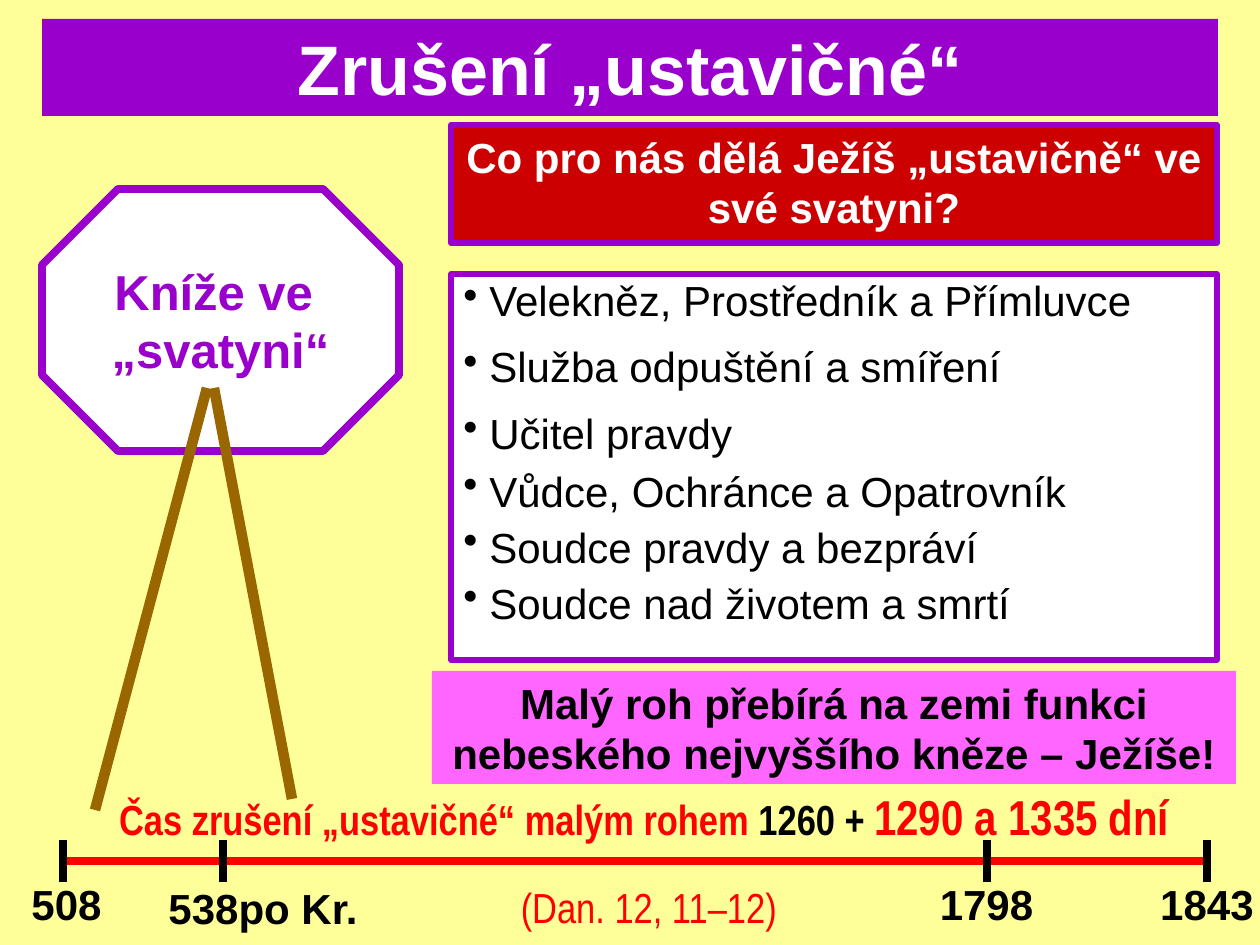
from pptx import Presentation
from pptx.util import Emu, Pt
from pptx.dml.color import RGBColor
from pptx.enum.shapes import MSO_SHAPE as Shape, MSO_CONNECTOR as Connector
from pptx.enum.text import PP_ALIGN as Align, MSO_ANCHOR as Anchor
from lxml.etree import SubElement
from pptx.oxml.ns import qn

PX = 914400 / 126  # EMU per px

PURPLE = RGBColor(0x99, 0x00, 0xCC)
WHITE = RGBColor(0xFF, 0xFF, 0xFF)
BLACK = RGBColor(0x00, 0x00, 0x00)
RED = RGBColor(0xFF, 0x00, 0x00)
DARK_RED = RGBColor(0xCC, 0x00, 0x00)
PINK = RGBColor(0xFF, 0x66, 0xFF)
BROWN = RGBColor(0x99, 0x66, 0x00)
CREAM = RGBColor(0xFF, 0xFF, 0x99)

prs = Presentation()
prs.slide_width, prs.slide_height = Emu(round(1260 * PX)), Emu(round(945 * PX))
slide = prs.slides.add_slide(prs.slide_layouts[6])
slide.background.fill.solid()
slide.background.fill.fore_color.rgb = CREAM


def add_block(box, paragraphs, fill=None, border=0, kind=Shape.RECTANGLE,
              align=Align.CENTER, anchor=Anchor.TOP):
    """Each paragraph is (paragraph format, [(text, size, colour, bold, font)])."""
    place = [Emu(round(v * PX)) for v in box]
    if fill is None:
        block = slide.shapes.add_textbox(*place)
    else:
        block = slide.shapes.add_shape(kind, *place)
        block.shadow.inherit = False
        block.fill.solid()
        block.fill.fore_color.rgb = fill
        if border:
            block.line.color.rgb = PURPLE
            block.line.width = Pt(border)
        else:
            block.line.fill.background()
    frame = block.text_frame
    frame.word_wrap = True
    frame.vertical_anchor = anchor
    for i, (spacing, runs) in enumerate(paragraphs):
        para = frame.paragraphs[0] if i == 0 else frame.add_paragraph()
        for key, value in {"alignment": align, **spacing}.items():
            setattr(para, key, value)
        for text, size, colour, bold, font in runs:
            run = para.add_run()
            run.text = text
            look = {"size": Pt(size), "bold": bold, "name": font}
            for key, value in look.items():
                setattr(run.font, key, value)
            run.font.color.rgb = colour
    return block


def add_line(x1, y1, x2, y2, colour, width):
    ends = [Emu(round(v * PX)) for v in (x1, y1, x2, y2)]
    line = slide.shapes.add_connector(Connector.STRAIGHT, *ends)
    line.line.color.rgb = colour
    line.line.width = Pt(width)
    SubElement(line._element.spPr, qn("a:effectLst"))


# Title
add_block((42, 19, 1176, 97),
          [({}, [("Zrušení „ustavičné“", 40, WHITE, True, "Arial")])], PURPLE)

# Prince in the sanctuary
prince = add_block((42, 189, 357, 262),
                   [({}, [(text, 28, PURPLE, True, "Arial")])
                    for text in ("Kníže ve ", "„svatyni“")],
                   WHITE, 4.5, Shape.OCTAGON, anchor=Anchor.MIDDLE)
prince.adjustments[0] = 0.29

# Time axis with its end marks
AXIS_LEFT, AXIS_RIGHT = 63, 1207
add_line(AXIS_LEFT, 861, AXIS_RIGHT, 861, RED, 4.5)
for x in (AXIS_LEFT, AXIS_RIGHT):
    add_line(x, 840, x, 882, BLACK, 4.5)

# Caption of the time axis
NARROW = "Arial Narrow"
add_block((82, 780, 1124, 163), [
    ({}, [("Čas zrušení „ustavičné“ malým rohem", 24, RED, True, NARROW),
          (" 1260 + ", 24, BLACK, True, NARROW),
          ("1290 a 1335 dní", 28, RED, True, NARROW)]),
    ({"line_spacing": 1.3, "space_before": Pt(12)},
     [(" (Dan. 12, 11–12)", 24, RED, False, NARROW)]),
])

# Question
add_block((451, 125, 766, 118),
          [({}, [("Co pro nás dělá Ježíš „ustavičně“ ve své svatyni?",
                  24, WHITE, True, "Arial")])], DARK_RED, 3)

# Legs from the sanctuary down to the axis
add_line(207, 388, 95, 810, BROWN, 6)
add_line(214, 388, 292, 799, BROWN, 6)

# Bulleted answers
answers = [
    ("Velekněz, Prostředník a Přímluvce", 0.9),
    ("Služba odpuštění a smíření", 0.9),
    ("Učitel pravdy", 0.9),
    ("Vůdce, Ochránce a Opatrovník", 0.7),
    ("Soudce pravdy a bezpráví", 0.7),
    ("Soudce nad životem a smrtí", 0.7),
]
answer_box = add_block(
    (451, 274, 766, 386),
    [({"line_spacing": spacing, "space_before": Pt(12 if i else 0)},
      [(text, 24, BLACK, False, "Arial")])
     for i, (text, spacing) in enumerate(answers)],
    WHITE, 3, align=Align.LEFT)
indent = round(26 * PX)
for para in answer_box.text_frame.paragraphs:
    props = para._p.get_or_add_pPr()
    props.set("marL", str(indent))
    props.set("indent", str(-indent))
    bullet_colour = SubElement(props, qn("a:buClr"))
    SubElement(bullet_colour, qn("a:srgbClr"), val=str(BLACK))
    SubElement(props, qn("a:buChar"), char="•")

# Conclusion
add_block((432, 671, 804, 113),
          [({}, [("Malý roh přebírá na zemi funkci nebeského nejvyššího kněze – Ježíše!",
                  24, BLACK, True, "Arial")])], PINK)

# Years and inner marks
for year, left, top, width in (("508", 10, 872, 113), ("1798", 913, 872, 147),
                               ("1843", 1144, 872, 126), ("538po Kr.", 154, 876, 218)):
    add_block((left, top, width, 63), [({}, [(year, 24, BLACK, True, "Arial")])])
for x in (987, 223):
    add_line(x, 840, x, 882, BLACK, 4.5)

prs.save("out.pptx")
